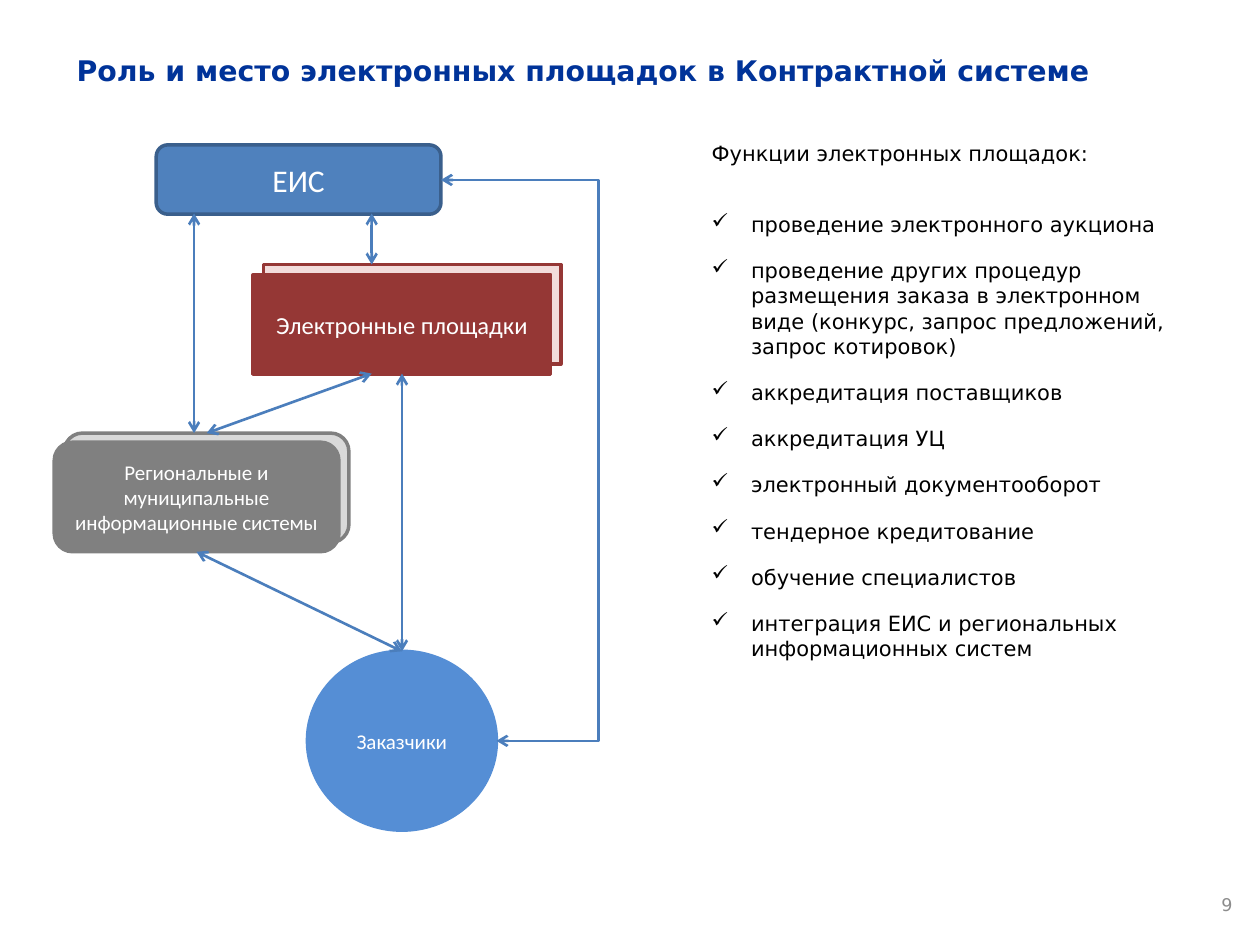
from lxml.etree import SubElement as Sub
from pptx import Presentation
from pptx.dml.color import RGBColor as Rgb
from pptx.enum.shapes import MSO_CONNECTOR as Link, MSO_SHAPE as Form
from pptx.enum.text import MSO_ANCHOR as Anchor, PP_ALIGN as Align
from pptx.oxml.ns import qn
from pptx.util import Pt

theme = {
    "sans": "DejaVu Sans", "body": "Calibri",
    "navy": "003399", "black": "000000", "white": "FFFFFF", "mute": "8C8C8C",
    "blue": "4F81BD", "edge": "3A5F8C", "link": "4B7EBC", "sky": "558ED5",
    "red": "953735", "pink": "F2DCDB", "gray": "808080", "pale": "D9D9D9",
    "title": 16.2, "head": 18, "mid": 14, "text": 12, "page": 10,
}


def write(para, text, size, color, font="sans", bold=False):
    run = para.add_run()
    run.text = text
    run.font.name = theme[font]
    run.font.size = Pt(theme[size])
    run.font.color.rgb = Rgb.from_string(theme[color])
    run.font.bold = bold


def frame(left, top, width, height, anchor):
    box = slide.shapes.add_textbox(Pt(left), Pt(top), Pt(width), Pt(height))
    box.text_frame.word_wrap = True
    box.text_frame.vertical_anchor = anchor
    return box.text_frame


deck = Presentation()
deck.slide_width, deck.slide_height = Pt(720), Pt(540)
slide = deck.slides.add_slide(deck.slide_layouts[6])

title = frame(36.7, 20.9, 648, 38.9, Anchor.MIDDLE)
write(title.paragraphs[0], "Роль и место электронных площадок в Контрактной системе",
      "title", "navy", bold=True)

page = frame(543.6, 502.6, 167.8, 28.8, Anchor.MIDDLE)
page.paragraphs[0].alignment = Align.RIGHT
write(page.paragraphs[0], "9", "page", "mute")

nodes = [
    (Form.ROUNDED_RECTANGLE, 89.3, 82.8, 162.7, 39.6, "blue", "edge", "ЕИС", "head"),
    (Form.RECTANGLE, 150.5, 151.2, 170, 56.9, "pink", "red", "", ""),
    (Form.RECTANGLE, 144.7, 157, 170, 56.9, "red", "red", "Электронные площадки", "mid"),
    (Form.ROUNDED_RECTANGLE, 36.7, 247.5, 162.7, 62.6, "pale", "gray", "", ""),
    (Form.ROUNDED_RECTANGLE, 31, 252.7, 162.7, 62.6, "gray", "gray",
     "Региональные и муниципальные информационные системы", "text"),
    (Form.OVAL, 175.7, 372.2, 108, 102.2, "sky", "sky", "Заказчики", "text"),
]
for form, left, top, width, height, fill, edge, label, size in nodes:
    node = slide.shapes.add_shape(form, Pt(left), Pt(top), Pt(width), Pt(height))
    node.shadow.inherit = False
    node.fill.solid()
    node.fill.fore_color.rgb = Rgb.from_string(theme[fill])
    node.line.color.rgb = Rgb.from_string(theme[edge])
    node.line.width = Pt(2)
    if label:
        node.text_frame.word_wrap = True
        node.text_frame.vertical_anchor = Anchor.MIDDLE
        para = node.text_frame.paragraphs[0]
        para.alignment = Align.CENTER
        write(para, label, size, "white", "body")

links = [
    (Link.STRAIGHT, 229.7, 372.2, 229.7, 213.5),
    (Link.STRAIGHT, 229.7, 372.2, 112.3, 315.3),
    (Link.STRAIGHT, 118.1, 247.5, 212.4, 213.5),
    (Link.STRAIGHT, 110.9, 247.5, 110.9, 122),
    (Link.STRAIGHT, 212.4, 151.2, 212.4, 122),
    (Link.ELBOW, 252, 102.8, 283.7, 423.3),
]
bend = 342
for kind, left, top, right, low in links:
    link = slide.shapes.add_connector(kind, Pt(left), Pt(top), Pt(right), Pt(low))
    link.line.color.rgb = Rgb.from_string(theme["link"])
    link.line.width = Pt(1.5)
    props = link._element.spPr
    for end in ("a:headEnd", "a:tailEnd"):
        Sub(props.find(qn("a:ln")), qn(end), type="arrow")
    Sub(props, qn("a:effectLst"))
    if kind == Link.ELBOW:
        ratio = round((bend - left) / (right - left) * 100000)
        Sub(props.find(".//" + qn("a:avLst")), qn("a:gd"), name="adj1", fmla=f"val {ratio}")

tasks = [
    "проведение электронного аукциона",
    "проведение других процедур размещения заказа в электронном виде "
    "(конкурс, запрос предложений, запрос котировок)",
    "аккредитация поставщиков",
    "аккредитация УЦ",
    "электронный документооборот",
    "тендерное кредитование",
    "обучение специалистов",
    "интеграция ЕИС и региональных информационных систем",
]
roles = frame(399.6, 77, 277.9, 337, Anchor.TOP)
write(roles.paragraphs[0], "Функции электронных площадок:", "text", "black")
for rank, task in enumerate(tasks):
    para = roles.add_paragraph()
    props = para._p.get_or_add_pPr()
    props.set("marL", str(Pt(22.5)))
    props.set("indent", str(-Pt(22.5)))
    Sub(props, qn("a:buChar"), char="✓")
    para.space_before = Pt(12 if rank else 26)
    write(para, task, "text", "black")

deck.save("out.pptx")
